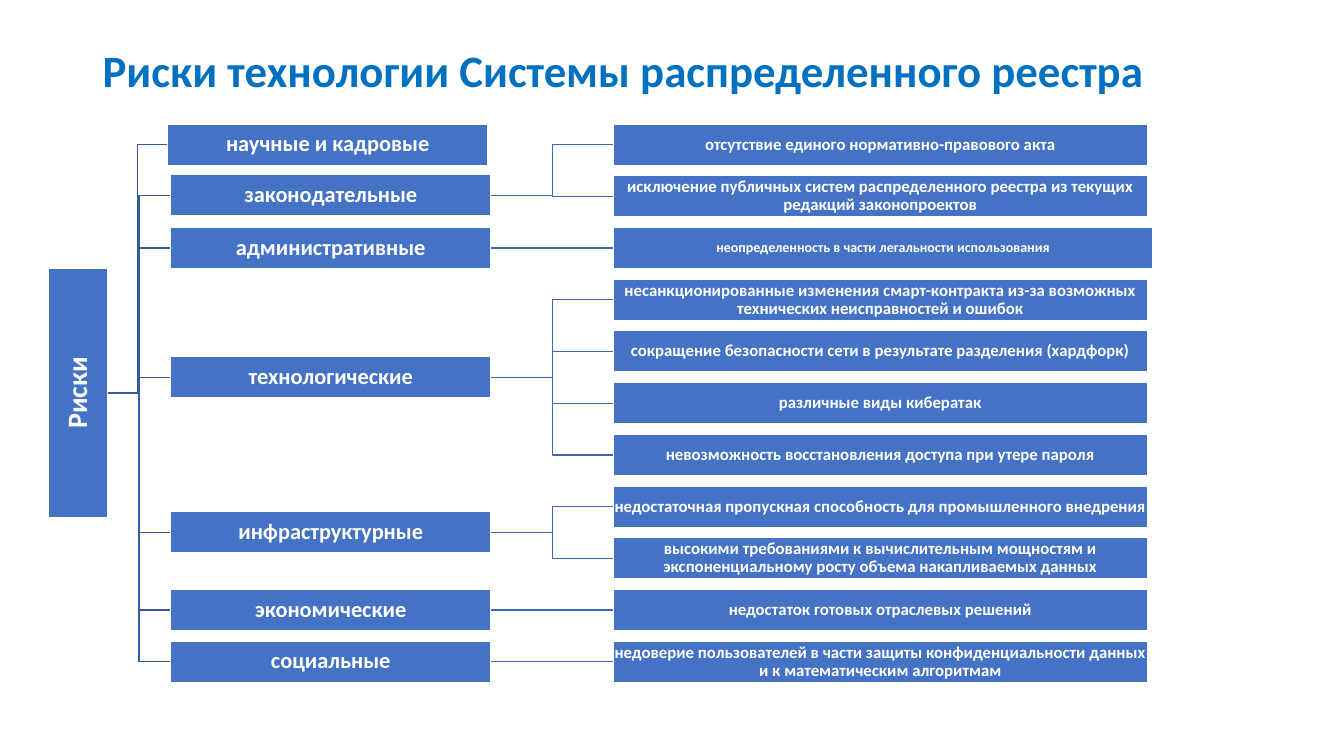
from pptx import Presentation
from pptx import util as u
from pptx.dml.color import RGBColor
from pptx.enum import shapes, text
from pptx.oxml.ns import qn
from lxml import etree

HUES = {"title": "0070C0", "box": "4472C4", "edge": "FFFFFF", "text": "FFFFFF",
        "stem": "365B9D", "twig": "3E67B2"}
RISKS = [
    ("научные и кадровые", 0, []),
    ("законодательные", 0.98, [
        "отсутствие единого нормативно-правового акта",
        "исключение публичных систем распределенного реестра из текущих редакций законопроектов"]),
    ("административные", 2, ["неопределенность в части легальности использования"]),
    ("технологические", 4.5, [
        "несанкционированные изменения смарт-контракта из-за возможных технических неисправностей и ошибок",
        "сокращение безопасности сети в результате разделения (хардфорк)",
        "различные виды кибератак",
        "невозможность восстановления доступа при утере пароля"]),
    ("инфраструктурные", 7.5, [
        "недостаточная пропускная способность для промышленного внедрения",
        "высокими требованиями к вычислительным мощностям и экспоненциальному росту объема накапливаемых данных"]),
    ("экономические", 9, ["недостаток готовых отраслевых решений"]),
    ("социальные", 10, [
        "недоверие пользователей в части защиты конфиденциальности данных и к математическим алгоритмам"]),
]


def tint(hue):
    """Return the named colour."""
    return RGBColor.from_string(HUES[hue])


def write(shape, words, size, hue, align, inset):
    """Put one bold paragraph into a shape."""
    frame = shape.text_frame
    sides = {"margin_" + s: u.Inches(inset) for s in ("left", "right", "top", "bottom")}
    para = frame.paragraphs[0]
    run = para.add_run()
    run.text = words
    run.font.color.rgb = tint(hue)
    looks = [
        (frame, {**sides, "word_wrap": True, "vertical_anchor": text.MSO_ANCHOR.MIDDLE}),
        (para, {"alignment": align, "line_spacing": 0.9}),
        (run.font, {"name": "Calibri", "size": u.Pt(size), "bold": True}),
    ]
    for part, look in looks:
        for key, value in look.items():
            setattr(part, key, value)


def head(slide, box):
    """Place the slide title in the box."""
    label = slide.shapes.add_textbox(*map(u.Inches, box))
    write(label, "Риски технологии Системы распределенного реестра", 32, "title",
          text.PP_ALIGN.LEFT, 0.1)


def block(slide, box, words, size, turn=0):
    """Draw one filled box with its label."""
    shape = slide.shapes.add_shape(shapes.MSO_SHAPE.RECTANGLE, *map(u.Inches, box))
    shape.shadow.inherit = False
    shape.rotation = turn
    shape.fill.solid()
    shape.fill.fore_color.rgb = tint("box")
    shape.line.color.rgb = tint("edge")
    shape.line.width = u.Pt(1)
    write(shape, words, size, "text", text.PP_ALIGN.CENTER, 0.01)


def link(slide, start, end, hue):
    """Join two points with a straight line or a square bend."""
    (x1, y1), (x2, y2) = [tuple(map(u.Inches, p)) for p in (start, end)]
    if y1 == y2:
        line = slide.shapes.add_connector(shapes.MSO_CONNECTOR.STRAIGHT, x1, y1, x2, y2)
        etree.SubElement(line._element.spPr, qn("a:effectLst"))
    else:
        mid = (x1 + x2) // 2
        path = slide.shapes.build_freeform(x1, y1)
        path.add_line_segments([(mid, y1), (mid, y2), (x2, y2)], close=False)
        line = path.convert_to_shape()
        line.fill.background()
        line.shadow.inherit = False
    line.line.color.rgb = tint(hue)
    line.line.width = u.Pt(1)


def tree(slide, box):
    """Lay out the root, the risk groups and their risks in the box."""
    left, top, wide, high = box
    step = high / 10.8
    tall = 0.8 * step
    root_w, mid_x, mid_w = 0.054 * wide, left + 0.111 * wide, 0.292 * wide
    leaf_x, leaf_w = left + 0.514 * wide, 0.486 * wide

    def level(row):
        """Return the middle height of a row."""
        return top + row * step + tall / 2

    hub = (left + root_w, level(4.8))
    span = 4.83 * step
    block(slide, (left + (root_w - span) / 2, hub[1] - root_w / 2, span, root_w),
          "Риски", 20, 270)
    leaf = 0
    for name, row, items in RISKS:
        x = mid_x if items else mid_x - 0.03
        link(slide, hub, (x, level(row)), "stem")
        block(slide, (x, top + row * step, mid_w, tall), name, 16)
        for item in items:
            lone = name == "административные"
            link(slide, (x + mid_w, level(row)), (leaf_x, level(leaf)), "twig")
            block(slide, (leaf_x, top + leaf * step, leaf_w + 0.05 * lone, tall),
                  item, 10 if lone else 12)
            leaf += 1


def main():
    """Build and save the slide."""
    deck = Presentation()
    deck.slide_width, deck.slide_height = u.Inches(13.33), u.Inches(7.5)
    slide = deck.slides.add_slide(deck.slide_layouts[6])
    head(slide, (0.92, 0, 11.5, 1.45))
    tree(slide, (0.48, 1.23, 10.9, 5.54))
    deck.save("out.pptx")


if __name__ == "__main__":
    main()
